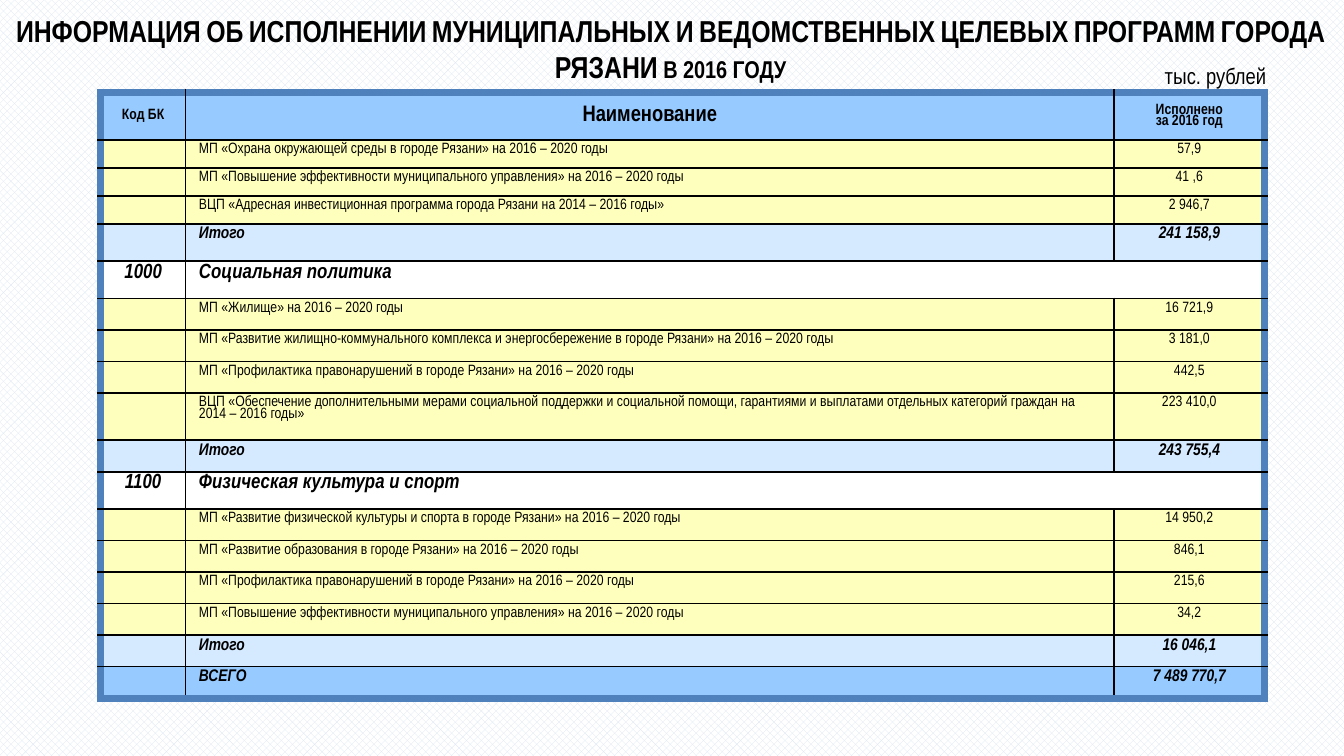
from lxml.etree import SubElement
from pptx import Presentation
from pptx.dml.color import RGBColor
from pptx.enum.dml import MSO_PATTERN
from pptx.enum.text import MSO_ANCHOR, PP_ALIGN
from pptx.oxml.ns import qn
from pptx.util import Pt

HEADER, ITEM, TOTAL, SECTION, GRAND = "header", "item", "total", "section", "grand"

ROWS = [
    (HEADER, 25.2, "Код БК", "Наименование", "Исполнено\nза 2016 год"),
    (ITEM, 13, "", "МП «Охрана окружающей среды в городе Рязани» на 2016 – 2020 годы", "57,9"),
    (ITEM, 13, "", "МП «Повышение эффективности муниципального управления» на 2016 – 2020 годы", "41 ,6"),
    (ITEM, 13, "", "ВЦП «Адресная инвестиционная программа города Рязани на 2014 – 2016 годы»", "2 946,7"),
    (TOTAL, 20, "", "Итого", "241 158,9"),
    (SECTION, 20, "1000", "Социальная политика", ""),
    (ITEM, 16.9, "", "МП «Жилище» на 2016 – 2020 годы", "16 721,9"),
    (ITEM, 16.9, "", "МП «Развитие жилищно-коммунального комплекса и энергосбережение в городе Рязани» на 2016 – 2020 годы", "3 181,0"),
    (ITEM, 16.9, "", "МП «Профилактика правонарушений в городе Рязани» на 2016 – 2020 годы", "442,5"),
    (ITEM, 25.2, "", "ВЦП «Обеспечение дополнительными мерами социальной поддержки и социальной помощи, гарантиями и выплатами отдельных категорий граждан на 2014 – 2016 годы»", "223 410,0"),
    (TOTAL, 16.9, "", "Итого", "243 755,4"),
    (SECTION, 20, "1100", "Физическая культура и спорт", ""),
    (ITEM, 16.9, "", "МП «Развитие физической культуры и спорта в городе Рязани» на 2016 – 2020 годы", "14 950,2"),
    (ITEM, 16.9, "", "МП «Развитие образования в городе Рязани» на 2016 – 2020 годы", "846,1"),
    (ITEM, 16.9, "", "МП «Профилактика правонарушений в городе Рязани» на 2016 – 2020 годы", "215,6"),
    (ITEM, 16.9, "", "МП «Повышение эффективности муниципального управления» на 2016 – 2020 годы", "34,2"),
    (TOTAL, 16.9, "", "Итого", "16 046,1"),
    (GRAND, 16.9, "", "ВСЕГО", "7 489 770,7"),
]

ROW_STYLES = {
    HEADER: ("97CBFF", dict(size=8, bold=True)),
    ITEM: ("FFFFBD", dict(size=8)),
    TOTAL: ("D5EAFF", dict(size=9, bold=True, italic=True)),
    SECTION: ("FFFFFF", dict(size=11, bold=True, italic=True)),
    GRAND: ("97CBFF", dict(size=9, bold=True, italic=True)),
}


def color(value):
    return RGBColor.from_string(value)


def write(tf, text, font="Arial Narrow", size=8, bold=False, italic=False,
          fill="000000", align=PP_ALIGN.CENTER, spacing=None, small_caps=False):
    for i, line in enumerate(text.split("\n")):
        p = tf.paragraphs[0] if i == 0 else tf.add_paragraph()
        p.alignment = align
        if spacing:
            p.line_spacing = spacing
        if not line:
            p._p.get_or_add_endParaRPr().set("sz", str(int(size * 100)))
            continue
        r = p.add_run()
        r.text = line
        r.font.name, r.font.size = font, Pt(size)
        r.font.bold, r.font.italic = bold, italic
        r.font.color.rgb = color(fill)
        if small_caps:
            r.font._element.set("cap", "small")


class Deck:
    thin = ("000000", 1)
    frame = ("4F81BD", 4.5)

    def __init__(self, prs):
        self.s = prs.slides.add_slide(prs.slide_layouts[5])

    def background(self, fore, back):
        fill = self.s.background.fill
        fill.patterned()
        fill.pattern = MSO_PATTERN.LARGE_CHECKER_BOARD
        fill.fore_color.rgb, fill.back_color.rgb = color(fore), color(back)

    def title(self, text, x, y, w, h, **style):
        sp = self.s.shapes.title
        sp.left, sp.top, sp.width, sp.height = Pt(x), Pt(y), Pt(w), Pt(h)
        sp.text_frame.word_wrap = True
        sp.text_frame.vertical_anchor = MSO_ANCHOR.TOP
        write(sp.text_frame, text, **style)

    def label(self, text, x, y, w, h, **style):
        tf = self.s.shapes.add_textbox(Pt(x), Pt(y), Pt(w), Pt(h)).text_frame
        tf.word_wrap = True
        tf.vertical_anchor = MSO_ANCHOR.MIDDLE
        write(tf, text, **style)

    def borders(self, cell, **sides):
        tc_pr = cell._tc.get_or_add_tcPr()
        for side in "LRTB":
            line, width = sides[side]
            ln = SubElement(tc_pr, qn(f"a:ln{side}"), w=str(Pt(width)))
            SubElement(SubElement(ln, qn("a:solidFill")), qn("a:srgbClr"), val=line)

    def cell(self, cell, text, fill, middle, **style):
        cell.margin_left = cell.margin_right = Pt(7.2)
        cell.margin_top = cell.margin_bottom = Pt(2.6)
        cell.vertical_anchor = MSO_ANCHOR.MIDDLE if middle else MSO_ANCHOR.TOP
        cell.fill.solid()
        cell.fill.fore_color.rgb = color(fill)
        write(cell.text_frame, text, spacing=0.8, **style)

    def table(self, rows, x, y, widths):
        height = sum(row[1] for row in rows)
        table = self.s.shapes.add_table(len(rows), len(widths), Pt(x), Pt(y),
                                        Pt(sum(widths)), Pt(height)).table
        table.first_row = table.horz_banding = False
        for column, width in zip(table.columns, widths):
            column.width = Pt(width)
        last_row, last_col = len(rows) - 1, len(widths) - 1
        for i, (kind, row_height, *texts) in enumerate(rows):
            table.rows[i].height = Pt(row_height)
            fill, style = ROW_STYLES[kind]
            if kind == SECTION:
                table.cell(i, 1).merge(table.cell(i, 2))
            for j, text in enumerate(texts):
                cell = table.cell(i, j)
                at_right = j == last_col or (kind == SECTION and j == 1)
                self.borders(cell,
                             L=self.frame if j == 0 else self.thin,
                             R=self.frame if at_right else self.thin,
                             T=self.frame if i == 0 else self.thin,
                             B=self.frame if i == last_row else self.thin)
                own = dict(style)
                if kind == HEADER and j == 1:
                    own["size"] = 12
                if kind != HEADER and j == 1:
                    own["align"] = PP_ALIGN.LEFT
                self.cell(cell, text, fill, kind == HEADER, **own)


def main():
    prs = Presentation()
    prs.slide_width, prs.slide_height = Pt(720), Pt(405)
    deck = Deck(prs)
    deck.background("DCE6F2", "FFFFFF")
    deck.title("ИНФОРМАЦИЯ ОБ ИСПОЛНЕНИИ МУНИЦИПАЛЬНЫХ И ВЕДОМСТВЕННЫХ ЦЕЛЕВЫХ "
               "ПРОГРАММ ГОРОДА РЯЗАНИ в 2016 году",
               0.7, 2.9, 717.1, 25.2, size=16.2, bold=True, small_caps=True)
    deck.table(ROWS, 54, 49.7, [45.4, 497.5, 80.6])
    deck.label("тыс. рублей", 604, 31, 94.3, 18.7, size=12)
    prs.save("out.pptx")


if __name__ == "__main__":
    main()
